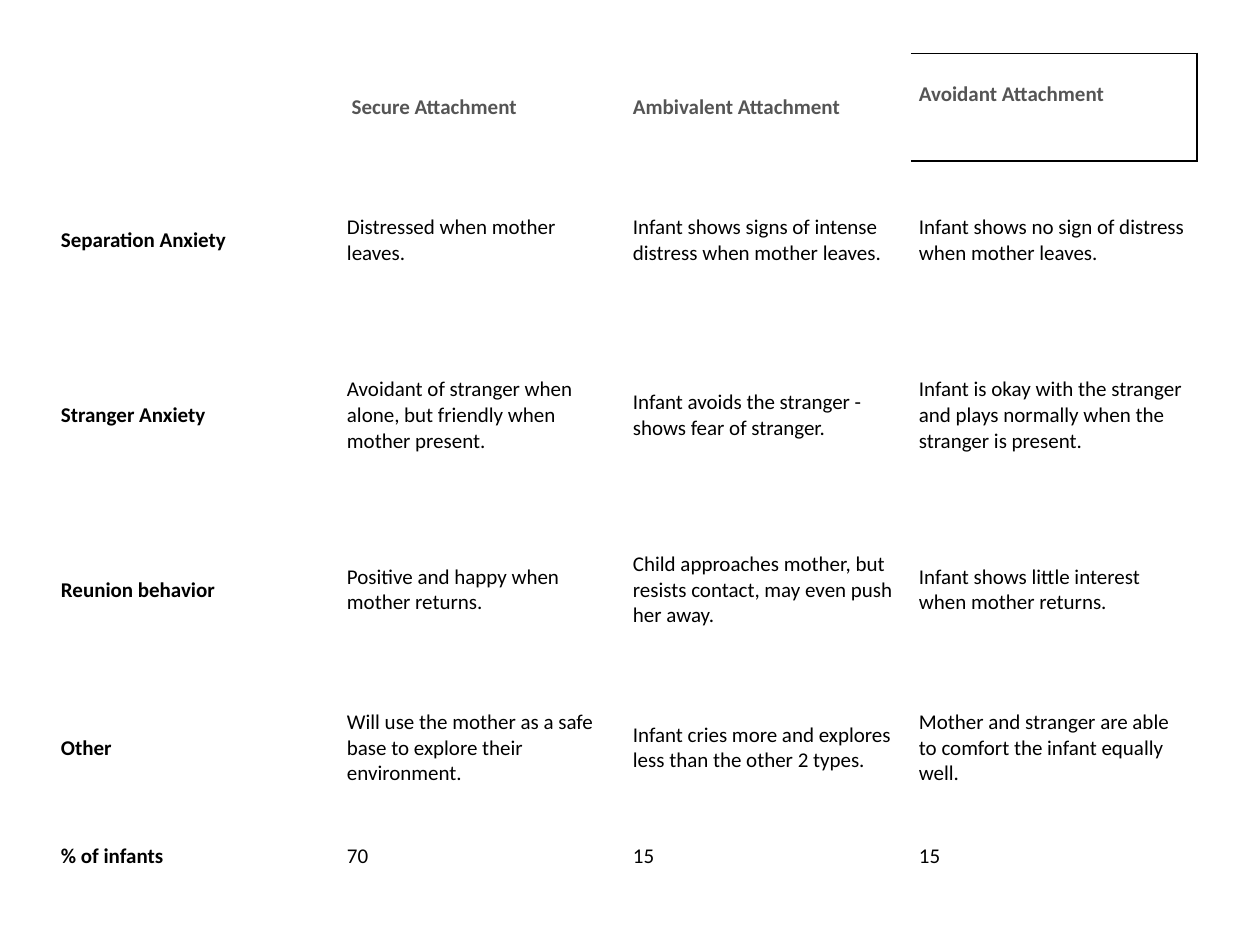
from dataclasses import dataclass

from lxml.etree import SubElement
from pptx import Presentation
from pptx.dml.color import RGBColor
from pptx.enum.text import MSO_ANCHOR
from pptx.oxml.ns import qn
from pptx.util import Pt

PX = 914400 // 126


@dataclass(frozen=True)
class Theme:
    font: str = "Calibri"
    size: int = 12
    heading: str = "555555"
    ink: str = "000000"
    paper: str = "FFFFFF"


THEME = Theme()
NO_STYLE = "{2D5ABB26-0587-4C30-8999-92F81FD0307C}"
SLIDE_SIZE = (1260, 945)
TABLE_ORIGIN = (53, 53)
COLUMN_WIDTH = 286
ROW_HEIGHTS = (108, 159, 191, 158, 158, 59)
CELL_MARGINS = (8, 10, 8, 10)
AVOIDANT_MARGINS = (8, 29, 8, 4)
AVOIDANT_BORDERS = {"R": 1, "T": 0.5, "B": 1}

ROWS = (
    ("", " Secure Attachment", "Ambivalent Attachment", "Avoidant Attachment"),
    ("Separation Anxiety",
     "Distressed when mother leaves.",
     "Infant shows signs of intense distress when mother leaves.",
     "Infant shows no sign of distress when mother leaves."),
    ("Stranger Anxiety",
     "Avoidant of stranger when alone, but friendly when mother present.",
     "Infant avoids the stranger - shows fear of stranger.",
     "Infant is okay with the stranger and plays normally when the stranger is present."),
    ("Reunion behavior",
     "Positive and happy when mother returns.",
     "Child approaches mother, but resists contact, may even push her away.",
     "Infant shows little interest when mother returns."),
    ("Other",
     "Will use the mother as a safe base to explore their environment.",
     "Infant cries more and explores less than the other 2 types.",
     "Mother and stranger are able to comfort the infant equally well."),
    ("% of infants", "70", "15", "15"),
)


def px(length):
    return length * PX


def write_text(cell, text, *, color=THEME.ink, bold=False,
               anchor=MSO_ANCHOR.MIDDLE, margins=CELL_MARGINS):
    """Fill a cell with one formatted paragraph; margins run left, top, right, bottom."""
    cell.fill.background()
    cell.vertical_anchor = anchor
    (cell.margin_left, cell.margin_top,
     cell.margin_right, cell.margin_bottom) = map(px, margins)
    if not text:
        return
    span = cell.text_frame.paragraphs[0].add_run()
    span.text = text
    span.font.name = THEME.font
    span.font.size = Pt(THEME.size)
    span.font.bold = bold
    span.font.color.rgb = RGBColor.from_string(color)


def draw_borders(cell, widths):
    """Draw the sides named in widths (L, R, T, B, in that order), in points."""
    properties = cell._tc.get_or_add_tcPr()
    for position, (side, width) in enumerate(widths.items()):
        line = SubElement(properties, qn(f"a:ln{side}"), w=str(Pt(width)))
        fill = SubElement(line, qn("a:solidFill"))
        SubElement(fill, qn("a:srgbClr"), val=THEME.ink)
        properties.insert(position, line)  # borders precede the cell fill


def add_plain_table(page):
    frame = page.shapes.add_table(
        len(ROWS), len(ROWS[0]), *map(px, TABLE_ORIGIN),
        px(COLUMN_WIDTH * len(ROWS[0])), px(sum(ROW_HEIGHTS)))
    table = frame.table
    table.first_row = table.horz_banding = False
    table._tbl.tblPr.find(qn("a:tableStyleId")).text = NO_STYLE
    for column in table.columns:
        column.width = px(COLUMN_WIDTH)
    for row, height in zip(table.rows, ROW_HEIGHTS):
        row.height = px(height)
    return table


def add_attachment_table(page):
    table = add_plain_table(page)
    avoidant = (0, len(ROWS[0]) - 1)
    for r, texts in enumerate(ROWS):
        for c, text in enumerate(texts):
            layout = {}
            if (r, c) == avoidant:
                layout = {"anchor": MSO_ANCHOR.TOP, "margins": AVOIDANT_MARGINS}
            write_text(table.cell(r, c), text, bold=r == 0 or c == 0,
                       color=THEME.heading if r == 0 else THEME.ink, **layout)
    draw_borders(table.cell(*avoidant), AVOIDANT_BORDERS)


def main():
    deck = Presentation()
    deck.slide_width, deck.slide_height = map(px, SLIDE_SIZE)
    page = deck.slides.add_slide(deck.slide_layouts[6])
    background = page.background.fill
    background.solid()
    background.fore_color.rgb = RGBColor.from_string(THEME.paper)
    add_attachment_table(page)
    deck.save("out.pptx")


if __name__ == "__main__":
    main()
